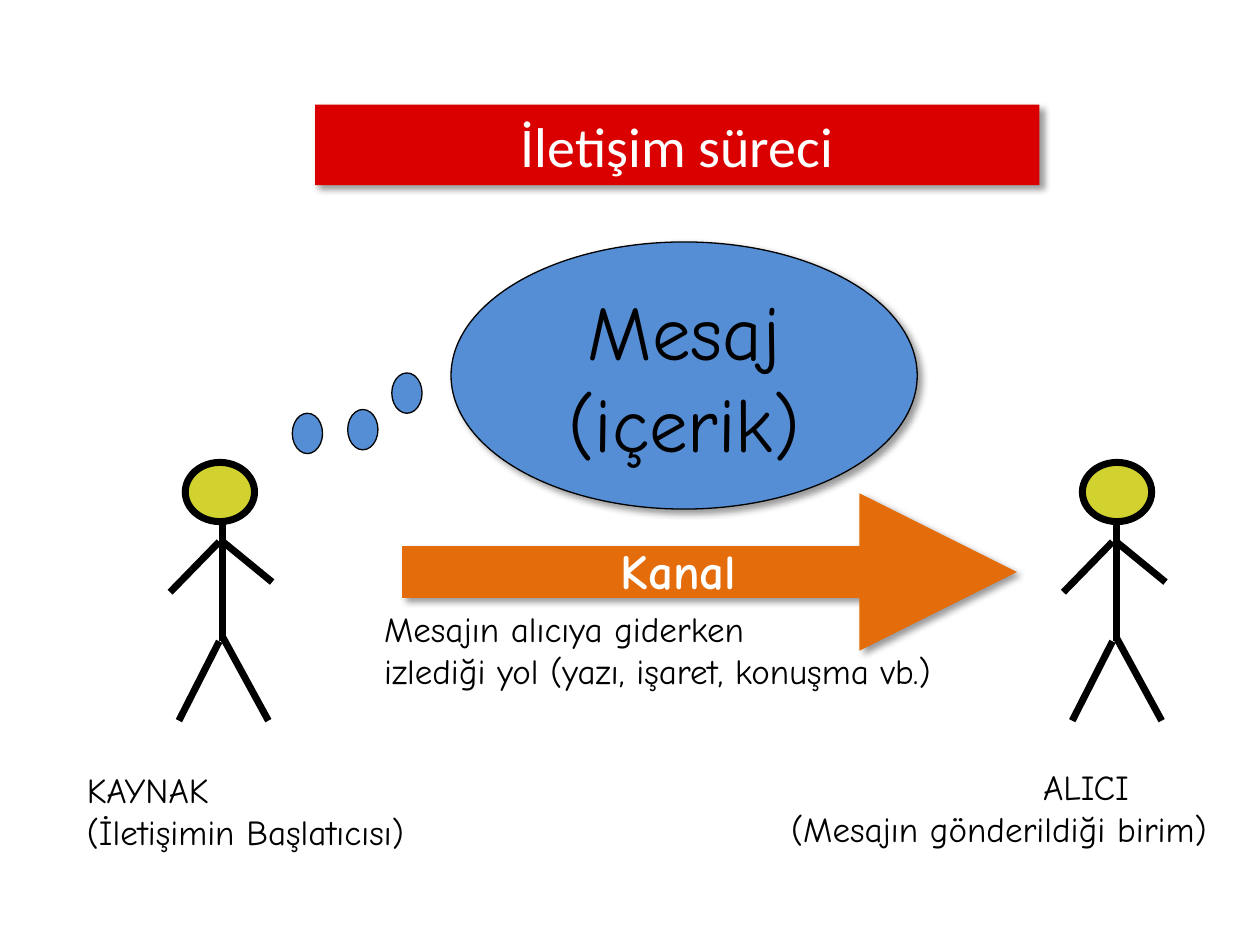
from lxml import etree
from pptx import Presentation
from pptx.dml.color import RGBColor
from pptx.enum.shapes import MSO_CONNECTOR, MSO_SHAPE
from pptx.enum.text import MSO_ANCHOR, MSO_AUTO_SIZE, PP_ALIGN
from pptx.oxml.ns import qn
from pptx.util import Inches, Pt

BLACK = RGBColor(0x00, 0x00, 0x00)
WHITE = RGBColor(0xFF, 0xFF, 0xFF)
RED = RGBColor(0xDA, 0x00, 0x00)
BLUE = RGBColor(0x55, 0x8E, 0xD5)
LIME = RGBColor(0xD1, 0xD1, 0x2F)
ORANGE = RGBColor(0xE4, 0x6C, 0x0A)
OVAL = MSO_SHAPE.OVAL
STRAIGHT = MSO_CONNECTOR.STRAIGHT
MIDDLE = MSO_ANCHOR.MIDDLE
FIXED = MSO_AUTO_SIZE.NONE
LEFT = PP_ALIGN.LEFT
CENTER = PP_ALIGN.CENTER
COLS, ROWS = 100, 75
LIMBS = (
    (0, 41.4, 0, 50.9),
    (0, 43, 3.9, 46.2),
    (-0.3, 43, -4.2, 47),
    (0, 50.6, 3.6, 57.2),
    (-0.3, 50.9, -3.5, 57.2),
)


class Board:
    """Draws styled elements on one slide, placed by grid columns and rows."""

    font = "Comic Neue"

    def __init__(self, deck):
        self.slide = deck.slides.add_slide(deck.slide_layouts[5])
        self.col = deck.slide_width / COLS
        self.row = deck.slide_height / ROWS

    def spot(self, *units):
        steps = (self.col, self.row) * 2
        return [round(unit * step) for unit, step in zip(units, steps)]

    def shade(self, effects):
        outer = etree.SubElement(effects, qn("a:outerShdw"), blurRad=str(Pt(4)),
                                 dist=str(Pt(3)), dir="2700000", rotWithShape="0")
        color = etree.SubElement(outer, qn("a:srgbClr"), val=str(BLACK))
        etree.SubElement(color, qn("a:alpha"), val="40000")

    def letter(self, shape, lines, size, color, align=LEFT, bold=False, font=None):
        frame = shape.text_frame
        frame.auto_size = FIXED
        for index, text in enumerate(lines):
            para = frame.add_paragraph() if index else frame.paragraphs[0]
            para.alignment = align
            run = para.add_run()
            run.text = text
            run.font.name = font or self.font
            run.font.size = Pt(size)
            run.font.bold = bold
            run.font.color.rgb = color
        return frame

    def title(self, text, *box):
        shape = self.slide.shapes.title
        shape.left, shape.top, shape.width, shape.height = self.spot(*box)
        shape.fill.solid()
        shape.fill.fore_color.rgb = RED
        shape.line.fill.background()
        shape.shadow.inherit = False
        self.shade(shape.element.spPr.find(qn("a:effectLst")))
        frame = self.letter(shape, [text], 32, WHITE, CENTER, font="Calibri")
        frame.vertical_anchor = MIDDLE

    def oval(self, fill, width, *box):
        shape = self.slide.shapes.add_shape(OVAL, *self.spot(*box))
        shape.shadow.inherit = False
        shape.fill.solid()
        shape.fill.fore_color.rgb = fill
        shape.line.color.rgb = BLACK
        shape.line.width = Pt(width)
        return shape

    def cloud(self, lines, *box):
        shape = self.oval(BLUE, 0.75, *box)
        self.shade(shape.element.spPr.find(qn("a:effectLst")))
        frame = self.letter(shape, lines, 44, BLACK, CENTER)
        frame.word_wrap = False
        frame.vertical_anchor = MIDDLE

    def line(self, color, width, *ends):
        link = self.slide.shapes.add_connector(STRAIGHT, *self.spot(*ends))
        link.line.color.rgb = color
        link.line.width = Pt(width)
        return link, etree.SubElement(link.element.spPr, qn("a:effectLst"))

    def arrow(self, *ends):
        link, effects = self.line(ORANGE, 30, *ends)
        self.shade(effects)
        etree.SubElement(link.element.spPr.find(qn("a:ln")), qn("a:tailEnd"),
                         type="triangle")

    def person(self, axis, head):
        self.oval(LIME, 4, head, 36.7, 5.5, 4.7)
        for left, top, right, end in LIMBS:
            self.line(BLACK, 4, axis + left, top, axis + right, end)

    def label(self, lines, *box, size=20, color=BLACK, bold=False):
        shape = self.slide.shapes.add_textbox(*self.spot(*box))
        frame = self.letter(shape, lines, size, color, bold=bold)
        frame.word_wrap = False
        return frame


def main():
    deck = Presentation()
    deck.slide_width, deck.slide_height = Inches(10), Inches(7.5)
    board = Board(deck)
    board.title("İletişim süreci", 25, 8.3, 57.5, 6.4)
    for axis, head in ((17.7, 14.7), (88.6, 85.9)):
        board.person(axis, head)
    board.arrow(31.9, 45.4, 80.7, 45.4)
    for left, top in ((23.2, 32.8), (27.6, 32.5), (31.1, 29.6)):
        board.oval(BLUE, 0.75, left, top, 2.4, 3.2)
    board.cloud(["Mesaj", "(içerik)"], 35.8, 19.2, 37, 21.2)
    board.label(["KAYNAK", "(İletişimin Başlatıcısı)"], 5.9, 60.5, 30.5, 7.7)
    target = board.label(["ALICI", "(Mesajın gönderildiği birim)"],
                         61.8, 60.3, 37.7, 7.7)
    props = target.paragraphs[0]._p.get_or_add_pPr()
    props.set("marL", str(Inches(2)))
    board.label(["Kanal"], 48.3, 42.4, 13.5, 5.7, size=28, color=WHITE, bold=True)
    board.label(["Mesajın alıcıya giderken",
                 "izlediği yol (yazı, işaret, konuşma vb.)"], 29.5, 47.7, 50, 7.7)
    deck.save("out.pptx")


if __name__ == "__main__":
    main()
